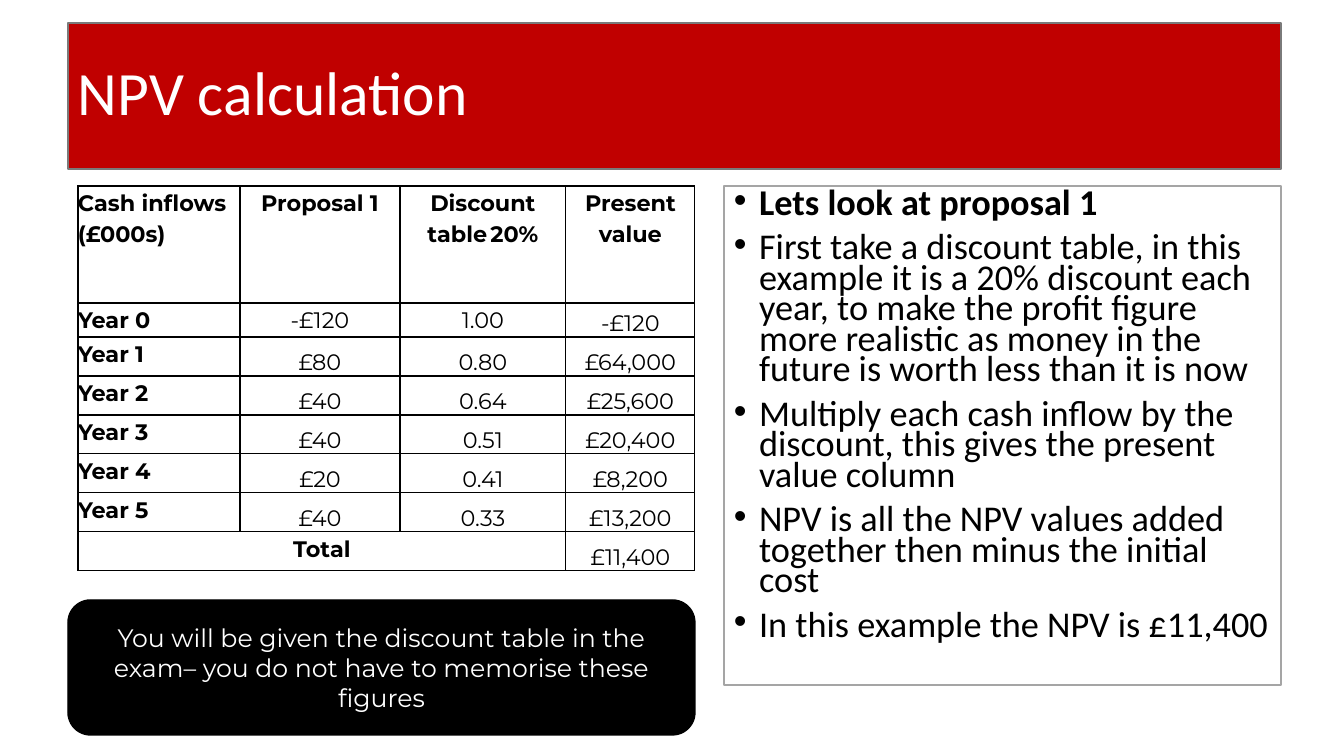
from lxml.etree import SubElement
from pptx import Presentation
from pptx.dml.color import RGBColor
from pptx.enum.shapes import MSO_SHAPE
from pptx.enum.text import MSO_ANCHOR, PP_ALIGN
from pptx.oxml.ns import qn
from pptx.util import Emu, Pt

RED = RGBColor(0xC0, 0x00, 0x00)
BLACK = RGBColor(0x00, 0x00, 0x00)
WHITE = RGBColor(0xFF, 0xFF, 0xFF)
DARK_GREY = RGBColor(0x7A, 0x7A, 0x7A)
LIGHT_GREY = RGBColor(0xA5, 0xA5, 0xA5)

COLUMNS = [162, 160, 166, 129]
ROWS = [117, 34] + [39] * 6
HEADERS = [["Cash inflows (£000s)"], ["Proposal 1"],
           ["Discount", " ", "table", " ", "20%"], ["Present value"]]
YEARS = [
    ["Year 0", "-£120", "1.00", "-£120"],
    ["Year 1", "£80", "0.80", "£64,000"],
    ["Year 2", "£40", "0.64", "£25,600"],
    ["Year 3", "£40", "0.51", "£20,400"],
    ["Year 4", "£20", "0.41", "£8,200"],
    ["Year 5", "£40", "0.33", "£13,200"],
]
STEPS = [
    "Lets look at proposal 1",
    "First take a discount table, in this example it is a 20% discount each year, "
    "to make the profit figure more realistic as money in the future is worth less "
    "than it is now",
    "Multiply each cash inflow by the discount, this gives the present value column",
    "NPV is all the NPV values added together then minus the initial cost",
    "In this example the NPV is £11,400",
]


def px(n):
    return Emu(round(n * 914400 / 100.8))


def add_run(p, text, size, font, color, bold=False):
    r = p.add_run()
    r.text = text
    r.font.size = Pt(size)
    r.font.name = font
    r.font.bold = bold
    r.font.color.rgb = color


def add_box(s, kind, x, y, w, h, fill, line, anchor):
    sp = s.shapes.add_shape(kind, px(x), px(y), px(w), px(h))
    sp.shadow.inherit = False
    sp.fill.solid()
    sp.fill.fore_color.rgb = fill
    sp.line.color.rgb = line
    sp.line.width = Pt(1)
    tf = sp.text_frame
    tf.word_wrap = True
    tf.vertical_anchor = anchor
    return tf


def add_bullet(p, text, bold):
    p.alignment = PP_ALIGN.LEFT
    p.line_spacing = 0.7
    p.space_before = Pt(10)
    pPr = p._p.get_or_add_pPr()
    pPr.set("marL", "228600")
    pPr.set("indent", "-228600")
    SubElement(pPr, qn("a:buFont"), typeface="Arial")
    SubElement(pPr, qn("a:buChar"), char="•")
    add_run(p, text, 25.9, "Calibri", BLACK, bold)


def add_borders(cell):
    tcPr = cell._tc.get_or_add_tcPr()
    for side in ("lnL", "lnR", "lnT", "lnB"):
        ln = SubElement(tcPr, qn(f"a:{side}"), w=str(Pt(1)))
        fill = SubElement(ln, qn("a:solidFill"))
        SubElement(fill, qn("a:srgbClr"), val=str(BLACK))


def fill_cell(cell, texts, bold=False, align=PP_ALIGN.CENTER, anchor=MSO_ANCHOR.TOP):
    cell.vertical_anchor = anchor
    p = cell.text_frame.paragraphs[0]
    p.alignment = align
    p.line_spacing = 1.15
    p.space_after = Pt(10)
    for text in texts:
        add_run(p, text, 8 if text == " " else 16, "Montserrat", BLACK, bold)


def add_npv_table(s, x, y):
    frame = s.shapes.add_table(len(ROWS), len(COLUMNS), px(x), px(y),
                               px(sum(COLUMNS)), px(sum(ROWS)))
    table = frame.table
    table.first_row = False
    table.horz_banding = False
    for column, width in zip(table.columns, COLUMNS):
        column.width = px(width)
    for row, height in zip(table.rows, ROWS):
        row.height = px(height)
    for cell in table.iter_cells():
        cell.margin_left = cell.margin_right = cell.margin_top = cell.margin_bottom = 0
        add_borders(cell)
        cell.fill.solid()
        cell.fill.fore_color.rgb = WHITE
    for j, texts in enumerate(HEADERS):
        fill_cell(table.cell(0, j), texts, True,
                  PP_ALIGN.CENTER if j else PP_ALIGN.LEFT)
    for i, (year, *values) in enumerate(YEARS, 1):
        fill_cell(table.cell(i, 0), [year], True, PP_ALIGN.LEFT)
        for j, value in enumerate(values, 1):
            top = i == 1 and j < 3
            fill_cell(table.cell(i, j), [value],
                      anchor=MSO_ANCHOR.TOP if top else MSO_ANCHOR.BOTTOM)
    total = len(ROWS) - 1
    table.cell(total, 0).merge(table.cell(total, 2))
    fill_cell(table.cell(total, 0), ["Total"], True)
    fill_cell(table.cell(total, 3), ["£11,400"], anchor=MSO_ANCHOR.BOTTOM)


def main():
    prs = Presentation()
    prs.slide_width, prs.slide_height = px(1344), px(756)
    s = prs.slides.add_slide(prs.slide_layouts[6])

    tf = add_box(s, MSO_SHAPE.RECTANGLE, 68, 23, 1213, 146, RED, DARK_GREY,
                 MSO_ANCHOR.MIDDLE)
    p = tf.paragraphs[0]
    p.alignment = PP_ALIGN.LEFT
    p.line_spacing = 0.9
    add_run(p, "NPV calculation", 44, "Calibri", WHITE)

    tf = add_box(s, MSO_SHAPE.RECTANGLE, 724, 186, 557, 499, WHITE, LIGHT_GREY,
                 MSO_ANCHOR.TOP)
    for i, step in enumerate(STEPS):
        p = tf.add_paragraph() if i else tf.paragraphs[0]
        add_bullet(p, step, bold=i == 0)

    add_npv_table(s, 78, 186)

    tf = add_box(s, MSO_SHAPE.ROUNDED_RECTANGLE, 68, 600, 627, 135, BLACK, BLACK,
                 MSO_ANCHOR.MIDDLE)
    p = tf.paragraphs[0]
    p.alignment = PP_ALIGN.CENTER
    add_run(p, "You will be given the discount table in the exam– you do not have to "
               "memorise these figures", 18, "Montserrat", WHITE)

    prs.save("out.pptx")


if __name__ == "__main__":
    main()
